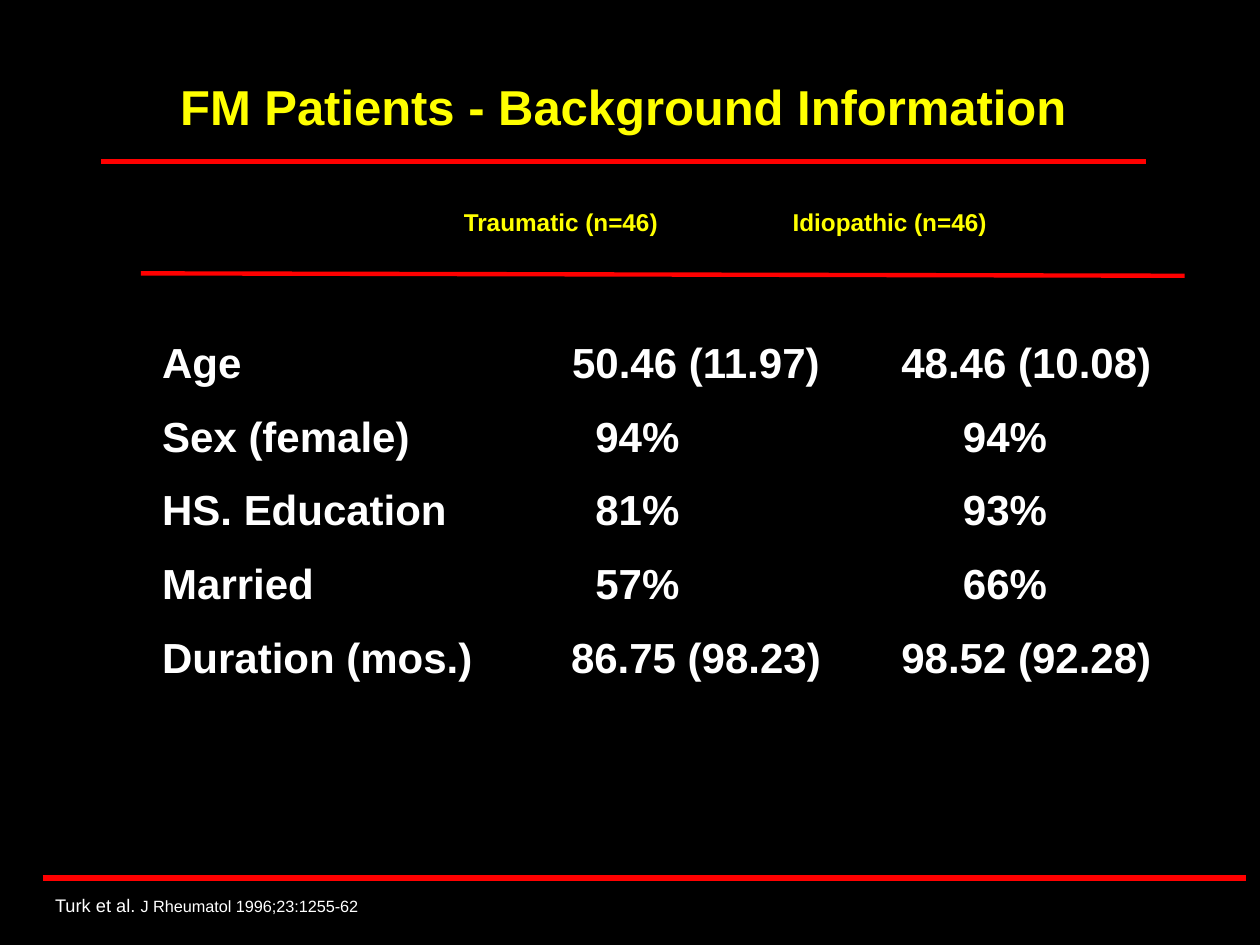
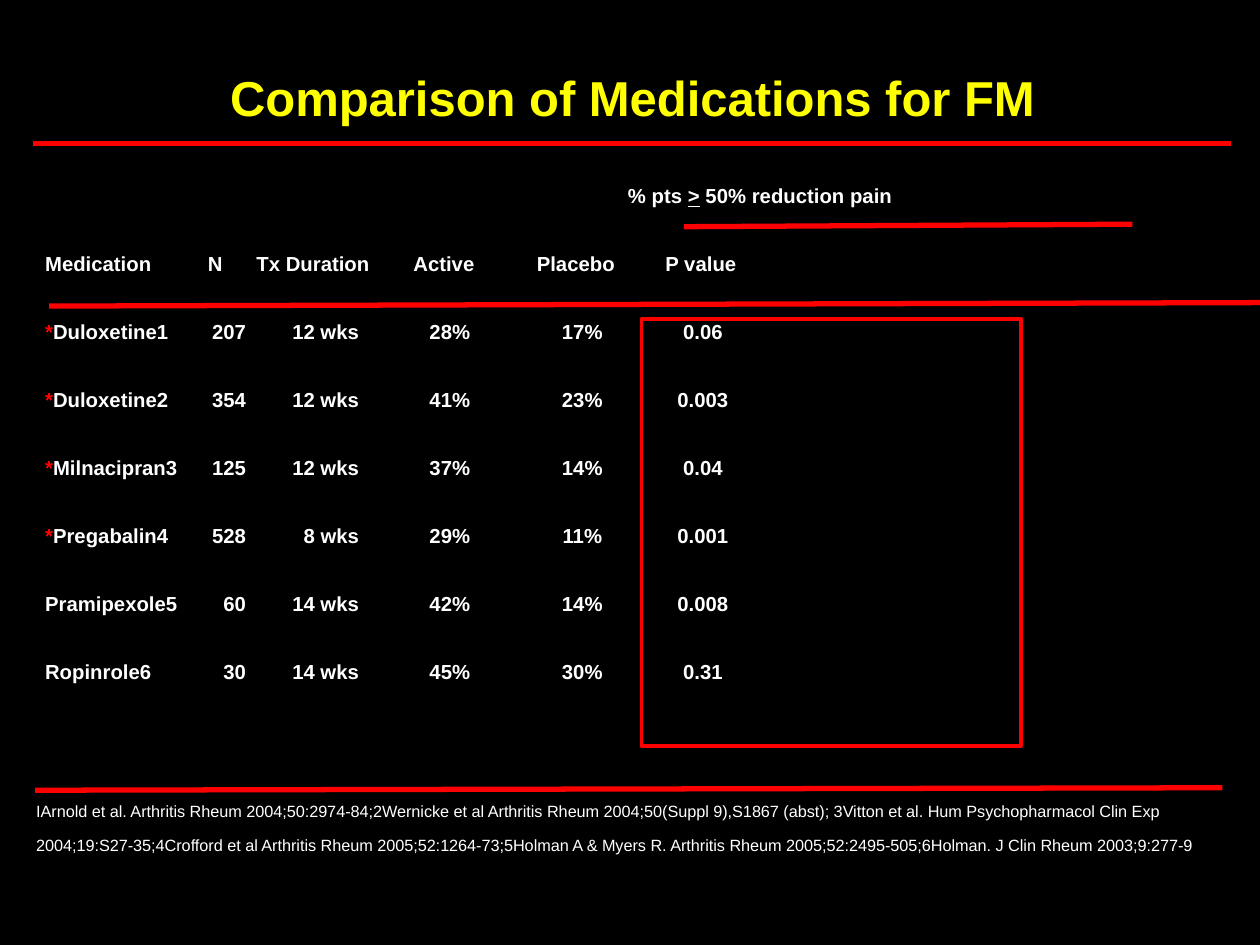
"""Build two slides on fibromyalgia patients and medications."""
from lxml.etree import SubElement
from pptx import Presentation
from pptx.dml.color import RGBColor
from pptx.enum.shapes import MSO_CONNECTOR, MSO_SHAPE
from pptx.enum.text import PP_ALIGN
from pptx.oxml.ns import qn
from pptx.util import Cm, Pt

HUES = {"back": "000000", "head": "FFFF00", "text": "FFFFFF", "rule": "FF0000"}
FONT = "Arial"


def write(slide, box, lines, size, hue="text", bold=True, gap=0, stops=()):
    """Add a text box; "|" parts the runs of a line, stops holds tabs per line."""
    frame = slide.shapes.add_textbox(*map(Cm, box)).text_frame
    frame.word_wrap = True
    frame.margin_left = frame.margin_right = frame.margin_top = frame.margin_bottom = 0
    frame.text = "\n".join(line.replace("|", "") for line in lines)
    for i, (para, line) in enumerate(zip(frame.paragraphs, lines)):
        para.clear()
        para.space_before, para.space_after = Pt(0), Pt(gap)
        for part in line.split("|"):
            run = para.add_run()
            run.text = part
            run.font.name, run.font.size, run.font.bold = FONT, Pt(size), bold
            run.font.color.rgb = RGBColor.from_string(HUES[hue])
        if stops:
            tabs = SubElement(para._p.get_or_add_pPr(), qn("a:tabLst"))
            for kind, pos in stops[i]:
                SubElement(tabs, qn("a:tab"), pos=str(Cm(pos)), algn=kind)
    return frame.paragraphs


def rule(slide, ends, width=3):
    """Draw a red line between two points."""
    line = slide.shapes.add_connector(MSO_CONNECTOR.STRAIGHT, *map(Cm, ends))
    line.line.color.rgb = RGBColor.from_string(HUES["rule"])
    line.line.width = Pt(width)
    SubElement(line._element.spPr, qn("a:effectLst"))


deck = Presentation()
deck.slide_width, deck.slide_height = Cm(25.4), Cm(19.05)

pages = []
for title, box in [
    ("FM Patients - Background Information", (2.29, 1.54, 20.55, 1.3)),
    ("Comparison of Medications for FM", (1.55, 1.36, 22.4, 1.3)),
]:
    page = deck.slides.add_slide(deck.slide_layouts[6])
    page.background.fill.solid()
    page.background.fill.fore_color.rgb = RGBColor.from_string(HUES["back"])
    write(page, box, [title], 28, "head")[0].alignment = PP_ALIGN.CENTER
    pages.append(page)
facts, drugs = pages

rule(facts, (2.03, 3.25, 23.11, 3.25))
rule(facts, (2.84, 5.51, 23.88, 5.56), 2.5)
rule(facts, (0.86, 17.7, 25.12, 17.7))
write(facts, (9.35, 4.17, 14, 0.8), ["Traumatic (n=46)\tIdiopathic (n=46)"],
      13.9, "head", stops=[[("l", 6.63)]])
means = [("ctr", 10.76), ("ctr", 17.42)]
rates = [("ctr", 9.58), ("ctr", 16.99)]
rows = [
    "Age\t50.46 (11.97)\t48.46 (10.08)",
    "Sex (female)\t94%\t94%",
    "HS. Education\t81%\t93%",
    "Married\t57%\t66%",
    "Duration (mos.)\t86.75 (98.23)\t98.52 (92.28)",
]
write(facts, (3.27, 6.79, 21.5, 7.2), rows, 24, gap=13.25,
      stops=[rates if "%" in row else means for row in rows])
cite = write(facts, (1.11, 18.03, 12, 0.6),
             ["Turk et al. |J Rheumatol 1996;23:1255-62"], 10.4, bold=False)
cite[0].runs[1].font.size = Pt(9.3)

rule(drugs, (0.66, 2.9, 24.82, 2.9))
rows = [
    "\t% pts |>| 50% reduction pain",
    "Medication\tN\tTx Duration\tActive\tPlacebo\tP value",
    "*|Duloxetine1\t207\t12 wks\t28%\t17%\t0.06",
    "*|Duloxetine2\t354\t12 wks\t41%\t23%\t0.003",
    "*|Milnacipran3\t125\t12 wks\t37%\t14%\t0.04",
    "*|Pregabalin4\t528\t8 wks\t29%\t11%\t0.001",
    "Pramipexole5\t60\t14 wks\t42%\t14%\t0.008",
    "Ropinrole6\t30\t14 wks\t45%\t30%\t0.31",
]
heads = [("ctr", pos) for pos in (3.43, 5.4, 8.04, 10.7, 13.22)]
cells = [("r", 4.05), ("r", 6.33), ("ctr", 8.16), ("ctr", 10.83), ("ctr", 13.26)]
paras = write(drugs, (0.91, 3.7, 24, 10.8), rows, 11.6, gap=24.9,
              stops=[[("l", 11.75)], heads] + [cells] * 6)
paras[0].runs[1].font.underline = True
for para in paras:
    if para.text.startswith("*"):
        para.runs[0].font.color.rgb = RGBColor.from_string(HUES["rule"])

rule(drugs, (0.99, 6.17, 25.4, 6.1))
rule(drugs, (0.71, 15.93, 24.64, 15.88))
rule(drugs, (13.79, 4.57, 22.83, 4.52))
refs = write(drugs, (0.73, 15.86, 23.9, 1.5), [
    "IArnold et al. Arthritis Rheum 2004;50:2974-84;"
    "2Wernicke et al Arthritis Rheum 2004;50(Suppl 9),S1867 (abst); "
    "3Vitton et al. Hum Psychopharmacol Clin Exp 2004;19:S27-35;"
    "4Crofford et al Arthritis Rheum 2005;52:1264-73;"
    "5Holman A & Myers R. Arthritis Rheum 2005;52:2495-505;"
    "6Holman. J Clin Rheum 2003;9:277-9"], 9.3, bold=False)
refs[0].line_spacing = Pt(19.4)

frame = drugs.shapes.add_shape(MSO_SHAPE.RECTANGLE, *map(Cm, (12.93, 6.43, 7.65, 8.61)))
frame.shadow.inherit = False
frame.fill.background()
frame.line.color.rgb = RGBColor.from_string(HUES["rule"])
frame.line.width = Pt(2)

deck.save("out.pptx")
